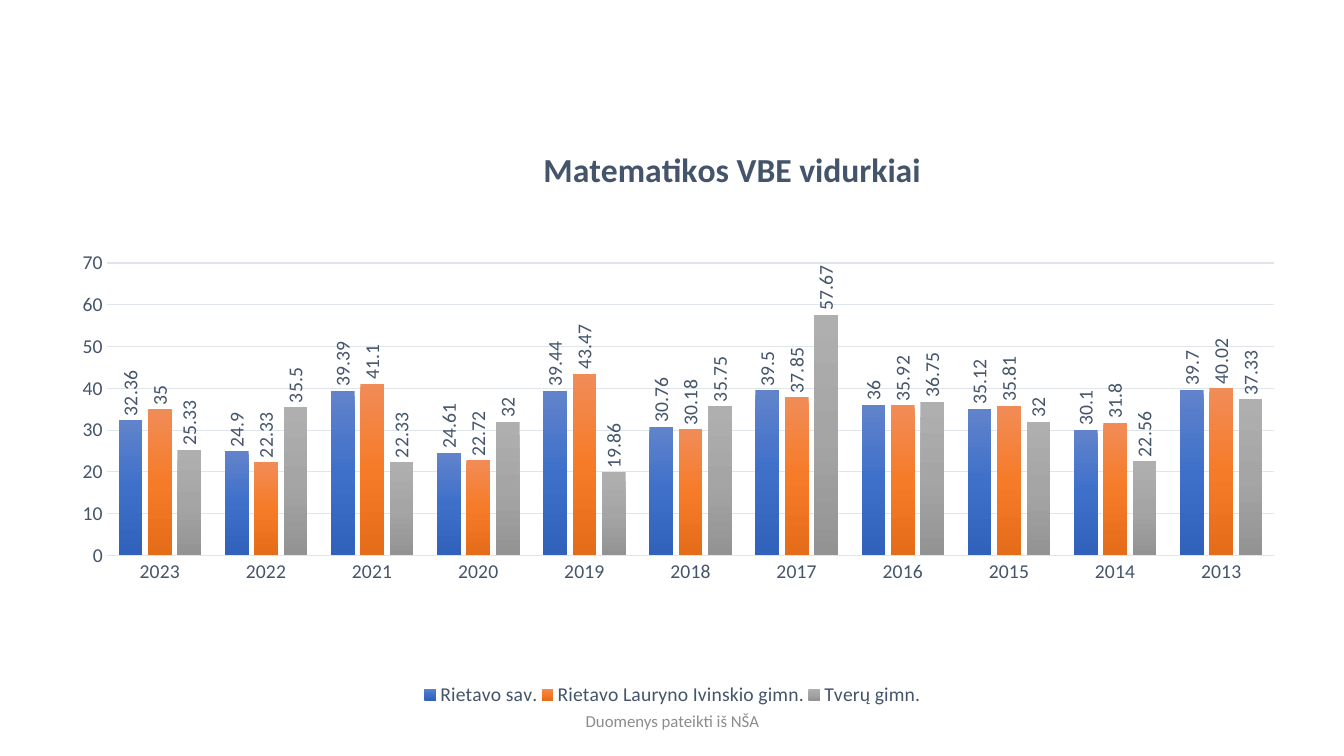
from dataclasses import dataclass

from lxml import etree
from pptx import Presentation
from pptx import util as u
from pptx.chart import data as chart_data
from pptx.dml.color import RGBColor
from pptx.enum import chart as charts
from pptx.enum import text
from pptx.oxml import parse_xml
from pptx.oxml.ns import nsdecls, qn

FONT = "Calibri"
COLOURS = {"text": "44546A", "grid": "E0E5EB", "footer": "8C8C8C"}
YEARS = [str(year) for year in range(2023, 2012, -1)]
CHART_WIDTH, CHART_HEIGHT = 12.77, 6.2


@dataclass(frozen=True)
class School:
    name: str
    averages: tuple[float, ...]
    gradient: tuple[str, str, str]


SCHOOLS = [
    School(
        "Rietavo sav.",
        (32.36, 24.9, 39.39, 24.61, 39.44, 30.76, 39.5, 36, 35.12, 30.1, 39.7),
        ("6183CB", "3E70CA", "3062BB"),
    ),
    School(
        "Rietavo Lauryno Ivinskio gimn.",
        (35, 22.33, 41.1, 22.72, 43.47, 30.18, 37.85, 35.92, 35.81, 31.8, 40.02),
        ("F18C57", "F67B28", "E56C19"),
    ),
    School(
        "Tverų gimn.",
        (25.33, 35.5, 22.33, 32, 19.86, 35.75, 57.67, 36.75, 32, 22.56, 37.33),
        ("AFAFAF", "A5A5A5", "939393"),
    ),
]


def set_font(font, size: float = 14, colour: str = "text", bold: bool = False) -> None:
    font.name = FONT
    font.size = u.Pt(size)
    font.bold = bold
    font.color.rgb = RGBColor.from_string(COLOURS[colour])


def write(frame, words: str, **font_format) -> None:
    """Put one centred, formatted line of text in a text frame."""
    para = frame.paragraphs[0]
    para.alignment = text.PP_ALIGN.CENTER
    span = para.add_run()
    span.text = words
    set_font(span.font, **font_format)


def place(parent: etree._Element, index: int, inner: bool = False, **inches: float) -> None:
    """Place a part of the chart, in inches from the chart's top left corner."""
    target = '<c:layoutTarget val="inner"/>' if inner else ""
    modes = "".join(f'<c:{key}Mode val="edge"/>' for key in "xy")
    sizes = "".join(
        f'<c:{key} val="{length / (CHART_WIDTH if key in "xw" else CHART_HEIGHT)}"/>'
        for key, length in inches.items()
    )
    for old in parent.findall(qn("c:layout")):
        parent.remove(old)
    parent.insert(index, parse_xml(
        f"<c:layout {nsdecls('c')}><c:manualLayout>{target}{modes}{sizes}"
        "</c:manualLayout></c:layout>"
    ))


def fill_gradient(series, colours: tuple[str, str, str]) -> None:
    """Fill the bars from top to bottom with three evenly spaced stops."""
    stops = "".join(
        f'<a:gs pos="{index * 50000}"><a:srgbClr val="{colour}"/></a:gs>'
        for index, colour in enumerate(colours)
    )
    properties = series.format._element.get_or_add_spPr()
    properties.insert(0, parse_xml(
        f"<a:gradFill {nsdecls('a')} rotWithShape=\"1\"><a:gsLst>{stops}</a:gsLst>"
        '<a:lin ang="5400000" scaled="0"/></a:gradFill>'
    ))


def draw_line(line) -> None:
    line.color.rgb = RGBColor.from_string(COLOURS["grid"])
    line.width = u.Pt(0.75)


def style_axes(chart) -> None:
    years, values = chart.category_axis, chart.value_axis
    for axis in (years, values):
        set_font(axis.tick_labels.font)
        axis.major_tick_mark = charts.XL_TICK_MARK.NONE
        axis.minor_tick_mark = charts.XL_TICK_MARK.NONE
    draw_line(years.format.line)
    values.format.line.fill.background()
    values.has_major_gridlines = True
    draw_line(values.major_gridlines.format.line)
    values.minimum_scale, values.maximum_scale, values.major_unit = 0, 70, 10
    values.tick_labels.number_format = "0"
    values.tick_labels.number_format_is_linked = False


def style_series(series, school: School) -> None:
    fill_gradient(series, school.gradient)
    series.invert_if_negative = False
    labels = series.data_labels
    labels.show_value = True
    labels.position = charts.XL_LABEL_POSITION.OUTSIDE_END
    set_font(labels.font)
    body = labels._element.find(qn("c:txPr")).find(qn("a:bodyPr"))
    body.set("rot", "-5400000")
    body.set("vert", "horz")


def add_averages_chart(page) -> None:
    averages = chart_data.CategoryChartData()
    averages.categories = YEARS
    for school in SCHOOLS:
        averages.add_series(school.name, school.averages)
    chart = page.shapes.add_chart(
        charts.XL_CHART_TYPE.COLUMN_CLUSTERED, u.Inches(0.28), u.Inches(1.15),
        u.Inches(CHART_WIDTH), u.Inches(CHART_HEIGHT), averages,
    ).chart
    set_font(chart.font)

    chart.has_title = True
    title = chart.chart_title
    write(title.text_frame, "Matematikos VBE vidurkiai", size=24, bold=True)
    title.include_in_layout = False
    place(title._element, 1, x=5.05, y=0.25)

    chart.has_legend = True
    legend = chart.legend
    legend.position = charts.XL_LEGEND_POSITION.BOTTOM
    legend.include_in_layout = False
    set_font(legend.font)
    place(legend._element, 1, x=3.89, y=5.58, w=5, h=0.32)

    plot = chart.plots[0]
    plot.gap_width, plot.overlap, plot.vary_by_categories = 100, -24, False
    place(plot._element.getparent(), 0, inner=True, x=0.78, y=1.46, w=11.58, h=2.9)
    style_axes(chart)
    for series, school in zip(plot.series, SCHOOLS):
        style_series(series, school)


def add_footer(page) -> None:
    box = page.shapes.add_textbox(
        u.Inches(4.42), u.Inches(6.95), u.Inches(4.5), u.Inches(0.4)
    )
    box.text_frame.word_wrap = True
    box.text_frame.vertical_anchor = text.MSO_ANCHOR.MIDDLE
    write(box.text_frame, "Duomenys pateikti iš NŠA", size=12, colour="footer")


def main() -> None:
    deck = Presentation()
    deck.slide_width, deck.slide_height = u.Inches(13.33), u.Inches(7.5)
    page = deck.slides.add_slide(deck.slide_layouts[6])
    add_averages_chart(page)
    add_footer(page)
    deck.save("out.pptx")


if __name__ == "__main__":
    main()
